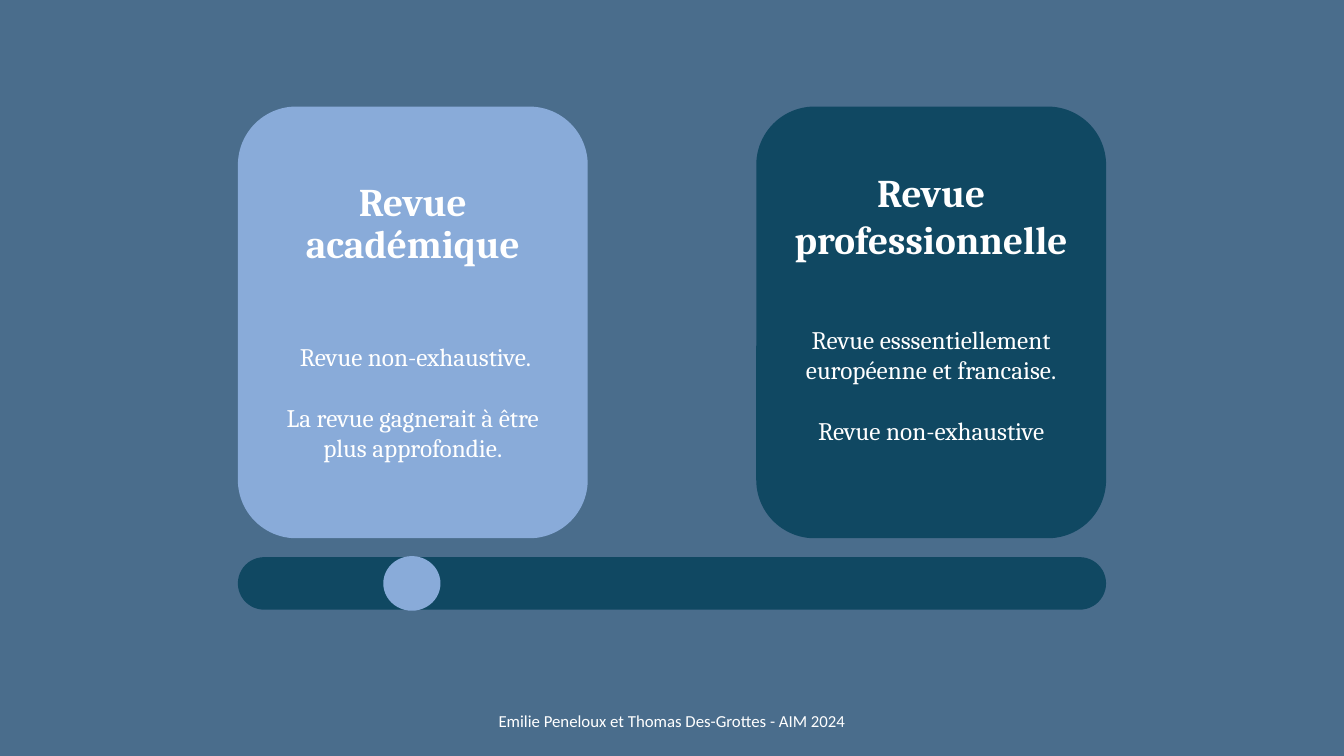
from dataclasses import dataclass

from pptx import Presentation
from pptx.dml.color import RGBColor
from pptx.enum.shapes import MSO_SHAPE as Preset
from pptx.enum.text import MSO_ANCHOR as Anchor, PP_ALIGN as Align
from pptx.shapes.autoshape import Shape
from pptx.slide import Slide
from pptx.util import Emu, Inches, Pt

WIDTH, HEIGHT = Inches(13.33), Inches(7.5)
BACKGROUND, LIGHT, DARK, WHITE = "4A6D8C", "89ABD9", "104862", "FFFFFF"

MARGIN = 17.7
CARD_WIDTH = 26.03
CARD_TOP, CARD_HEIGHT = 14.1, 57.1
BAR_TOP, BAR_HEIGHT = 73.7, 6.95
BLANK_LINE = 22


@dataclass(frozen=True)
class Area:
    left: float
    top: float
    width: float
    height: float

    def lengths(self) -> tuple[Emu, Emu, Emu, Emu]:
        return (
            Emu(round(WIDTH * self.left / 100)),
            Emu(round(HEIGHT * self.top / 100)),
            Emu(round(WIDTH * self.width / 100)),
            Emu(round(HEIGHT * self.height / 100)),
        )


@dataclass(frozen=True)
class Line:
    text: str
    size: int = 18
    bold: bool = False
    before: float = 0
    spacing: float = 1.0
    font: str = "Cambria"


@dataclass(frozen=True)
class Card:
    left: float
    fill: str
    lines: tuple[Line, ...]
    bottom_inset: float = 0.05


CARDS = (
    Card(MARGIN, LIGHT, (
        Line("Revue académique", 28, True, spacing=0.9),
        Line(" Revue non-exhaustive.", before=53),
        Line("La revue gagnerait à être plus approfondie.", before=BLANK_LINE),
    )),
    Card(100 - MARGIN - CARD_WIDTH, DARK, (
        Line("Revue professionnelle", 28, True),
        Line("Revue esssentiellement européenne et francaise.", before=2 * BLANK_LINE),
        Line("Revue non-exhaustive", before=BLANK_LINE),
    ), bottom_inset=0.35),
)
FOOTER = Line("Emilie Peneloux et Thomas Des-Grottes - AIM 2024", 12, font="Calibri")


def color(value: str) -> RGBColor:
    return RGBColor.from_string(value)


def draw_shape(page: Slide, preset: Preset, area: Area, fill: str) -> Shape:
    box = page.shapes.add_shape(preset, *area.lengths())
    box.shadow.inherit = False
    box.fill.solid()
    box.fill.fore_color.rgb = color(fill)
    box.line.fill.background()
    return box


def write_lines(box: Shape, lines: tuple[Line, ...]) -> None:
    frame = box.text_frame
    frame.word_wrap = True
    frame.vertical_anchor = Anchor.MIDDLE
    frame.text = "\n".join(line.text for line in lines)
    for para, line in zip(frame.paragraphs, lines):
        para.alignment = Align.CENTER
        para.space_before = Pt(line.before)
        para.line_spacing = line.spacing
        for span in para.runs:
            span.font.name = line.font
            span.font.size = Pt(line.size)
            span.font.bold = line.bold
            span.font.color.rgb = color(WHITE)


def draw_card(page: Slide, card: Card) -> None:
    area = Area(card.left, CARD_TOP, CARD_WIDTH, CARD_HEIGHT)
    box = draw_shape(page, Preset.ROUNDED_RECTANGLE, area, card.fill)
    write_lines(box, card.lines)
    box.text_frame.margin_bottom = Inches(card.bottom_inset)


def draw_slider(page: Slide) -> None:
    track = Area(MARGIN, BAR_TOP, 100 - 2 * MARGIN, BAR_HEIGHT)
    bar = draw_shape(page, Preset.ROUNDED_RECTANGLE, track, DARK)
    bar.adjustments[0] = 0.5
    knob = draw_shape(page, Preset.OVAL, Area(28.6, BAR_TOP, 4.1, BAR_HEIGHT), LIGHT)
    knob.line.color.rgb = color(LIGHT)
    knob.line.width = Pt(1.5)


def main() -> None:
    deck = Presentation()
    deck.slide_width, deck.slide_height = WIDTH, HEIGHT
    page = deck.slides.add_slide(deck.slide_layouts[6])
    page.background.fill.solid()
    page.background.fill.fore_color.rgb = color(BACKGROUND)
    for card in CARDS:
        draw_card(page, card)
    draw_slider(page)
    footer = page.shapes.add_textbox(*Area(33.13, 92.7, 33.75, 5.3).lengths())
    write_lines(footer, (FOOTER,))
    deck.save("out.pptx")


if __name__ == "__main__":
    main()
